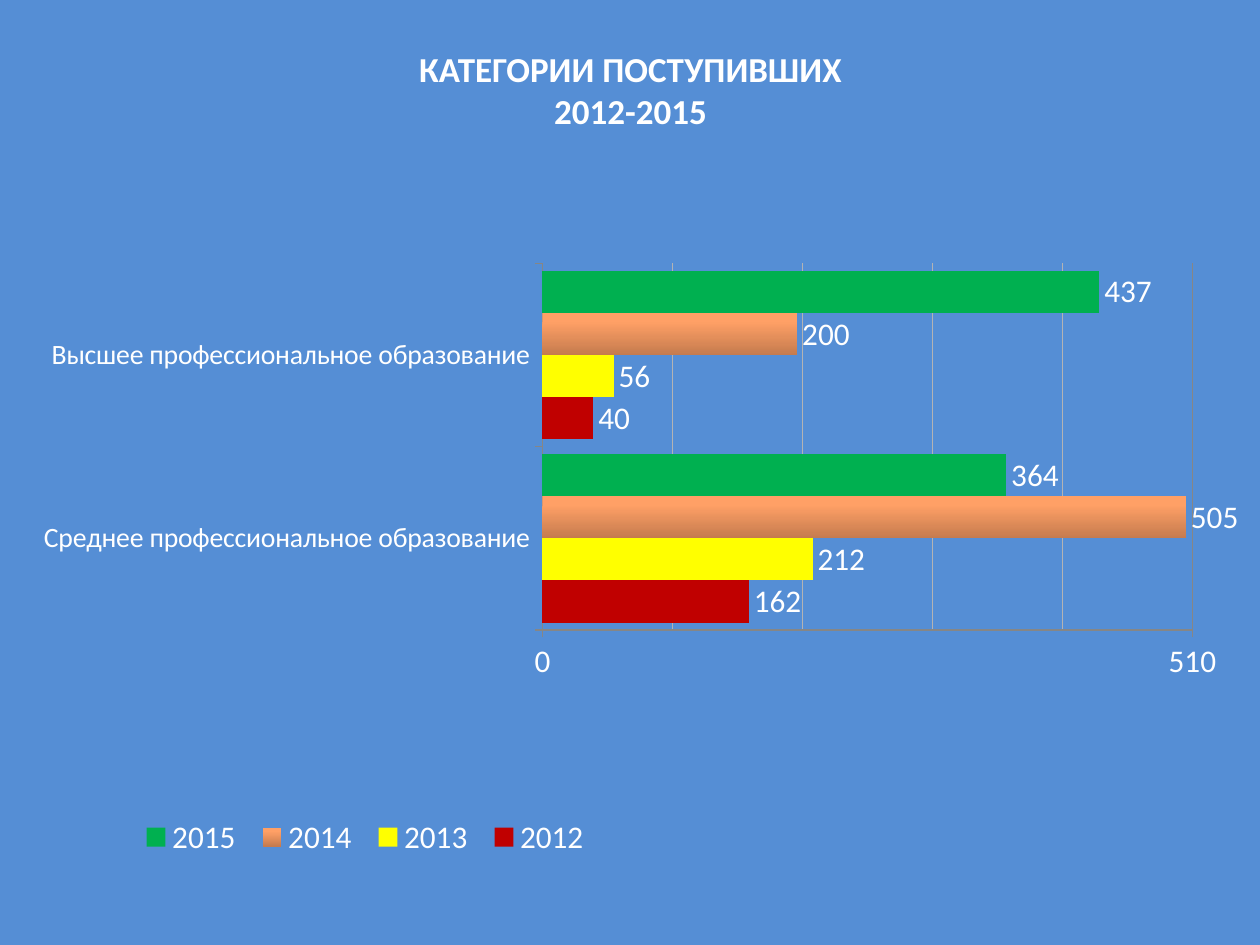
from pptx import Presentation
from pptx.chart.data import CategoryChartData
from pptx.dml.color import RGBColor
from pptx.enum.chart import XL_CHART_TYPE, XL_LABEL_POSITION, XL_LEGEND_POSITION, XL_TICK_MARK
from pptx.enum.text import MSO_ANCHOR, PP_ALIGN
from pptx.oxml import parse_xml
from pptx.oxml.ns import nsdecls, qn
from pptx.util import Inches, Pt

BAR_CLUSTERED = XL_CHART_TYPE.BAR_CLUSTERED
OUTSIDE_END = XL_LABEL_POSITION.OUTSIDE_END
BOTTOM = XL_LEGEND_POSITION.BOTTOM
TICK_OUTSIDE, TICK_NONE = XL_TICK_MARK.OUTSIDE, XL_TICK_MARK.NONE
TOP, CENTER = MSO_ANCHOR.TOP, PP_ALIGN.CENTER

BLUE = RGBColor(0x55, 0x8E, 0xD5)
WHITE = RGBColor(0xFF, 0xFF, 0xFF)
AXIS_GRAY = RGBColor(0x86, 0x86, 0x86)
GRID_GRAY = RGBColor(0xB3, 0xB3, 0xB3)
RED = RGBColor(0xC0, 0x00, 0x00)
YELLOW = RGBColor(0xFF, 0xFF, 0x00)
GREEN = RGBColor(0x00, 0xB0, 0x50)
ORANGE = RGBColor(0xFF, 0xA0, 0x66)
BROWN = RGBColor(0xC5, 0x7B, 0x4E)

CATEGORIES = ["Среднее профессиональное образование",
              "Высшее профессиональное образование"]
# Name, values, and one colour or the two ends of a gradient
SERIES = [
    ("2012", (162, 40), (RED,)),
    ("2013", (212, 56), (YELLOW,)),
    ("2014", (505, 200), (ORANGE, BROWN)),
    ("2015", (364, 437), (GREEN,)),
]


def set_attributes(target, values):
    for name, value in values.items():
        setattr(target, name, value)


def place(parent, inner, **fractions):
    """Give a plot area or legend a fixed place within the chart."""
    target = '<c:layoutTarget val="inner"/>' if inner else ""
    modes = "".join(f'<c:{side}Mode val="edge"/>' for side in "xy")
    sizes = "".join(f'<c:{name} val="{value}"/>' for name, value in fractions.items())
    layout = parse_xml(f'<c:layout {nsdecls("c")}><c:manualLayout>'
                       f'{target}{modes}{sizes}</c:manualLayout></c:layout>')
    for old in parent.findall(layout.tag):
        parent.remove(old)
    parent.insert(0 if inner else 1, layout)


class SlideBuilder:
    font_name = "Calibri"
    text_color = WHITE
    line_width = Pt(0.75)

    def __init__(self, presentation):
        self.slide = presentation.slides.add_slide(presentation.slide_layouts[6])

    def background(self, color):
        fill = self.slide.background.fill
        fill.solid()
        fill.fore_color.rgb = color

    def style_font(self, font, size, bold=False):
        set_attributes(font, {"name": self.font_name, "size": Pt(size), "bold": bold})
        font.color.rgb = self.text_color

    def title(self, text, box, size, top_inset):
        frame = self.slide.shapes.add_textbox(*map(Inches, box)).text_frame
        set_attributes(frame, {"word_wrap": True, "vertical_anchor": TOP,
                               "margin_top": Inches(top_inset), "margin_bottom": 0})
        paragraph = frame.paragraphs[0]
        set_attributes(paragraph, {"text": text, "alignment": CENTER})
        for run in paragraph.runs:
            self.style_font(run.font, size, bold=True)

    def fill_series(self, fill, colors):
        if len(colors) == 1:
            fill.solid()
            fill.fore_color.rgb = colors[0]
            return
        fill.gradient()
        fill.gradient_angle = 270
        for stop, color, position in zip(fill.gradient_stops, colors, (0.2, 1)):
            stop.color.rgb = color
            stop.position = position

    def minor_gridlines(self, axis, unit, color):
        axis.has_minor_gridlines = True
        axis._element.find(qn("c:minorGridlines")).append(parse_xml(
            f'<c:spPr {nsdecls("c", "a")}><a:ln w="{self.line_width}"><a:solidFill>'
            f'<a:srgbClr val="{color}"/></a:solidFill></a:ln></c:spPr>'))
        axis.minor_unit = unit

    def bar_chart(self, box, categories, series_rows, size):
        data = CategoryChartData()
        data.categories = categories
        for name, values, _ in series_rows:
            data.add_series(name, values)
        chart = self.slide.shapes.add_chart(BAR_CLUSTERED, *map(Inches, box), data).chart
        set_attributes(chart, {"has_title": False, "has_legend": True})
        self.style_font(chart.font, size)

        # Bars and value labels
        plot = chart.plots[0]
        set_attributes(plot, {"gap_width": 35, "overlap": 0, "vary_by_categories": False})
        for series, (_, _, colors) in zip(plot.series, series_rows):
            series.invert_if_negative = False
            self.fill_series(series.format.fill, colors)
            labels = series.data_labels
            set_attributes(labels, {"show_value": True, "position": OUTSIDE_END})
            self.style_font(labels.font, size)

        # Axes and gridlines
        axis_max = 510
        value_axis, category_axis = chart.value_axis, chart.category_axis
        set_attributes(value_axis, {
            "minimum_scale": 0, "maximum_scale": axis_max, "major_unit": axis_max,
            "has_major_gridlines": True})
        self.minor_gridlines(value_axis, axis_max // 5, GRID_GRAY)
        for axis, label_size in ((value_axis, size), (category_axis, 16)):
            set_attributes(axis, {"major_tick_mark": TICK_OUTSIDE,
                                  "minor_tick_mark": TICK_NONE})
            self.style_font(axis.tick_labels.font, label_size)
        for item in (value_axis, category_axis, value_axis.major_gridlines):
            item.format.line.color.rgb = AXIS_GRAY
            item.format.line.width = self.line_width

        # Legend and plot area
        legend = chart.legend
        set_attributes(legend, {"position": BOTTOM, "include_in_layout": False})
        self.style_font(legend.font, size)
        place(legend._element, False, x=0.09, y=0.93, w=0.39, h=0.05)
        place(plot._element.getparent(), True, x=0.432, y=0.326, w=0.539, h=0.402)


def main():
    presentation = Presentation()
    set_attributes(presentation, {"slide_width": Inches(10), "slide_height": Inches(7.5)})
    builder = SlideBuilder(presentation)
    builder.background(BLUE)
    builder.bar_chart((0.17, -0.27, 9.66, 7.24), CATEGORIES, SERIES, size=18)
    builder.title("КАТЕГОРИИ ПОСТУПИВШИХ\n2012-2015", (0.41, 0, 9.19, 0.99),
                  size=20, top_inset=0.38)
    presentation.save("out.pptx")


if __name__ == "__main__":
    main()
